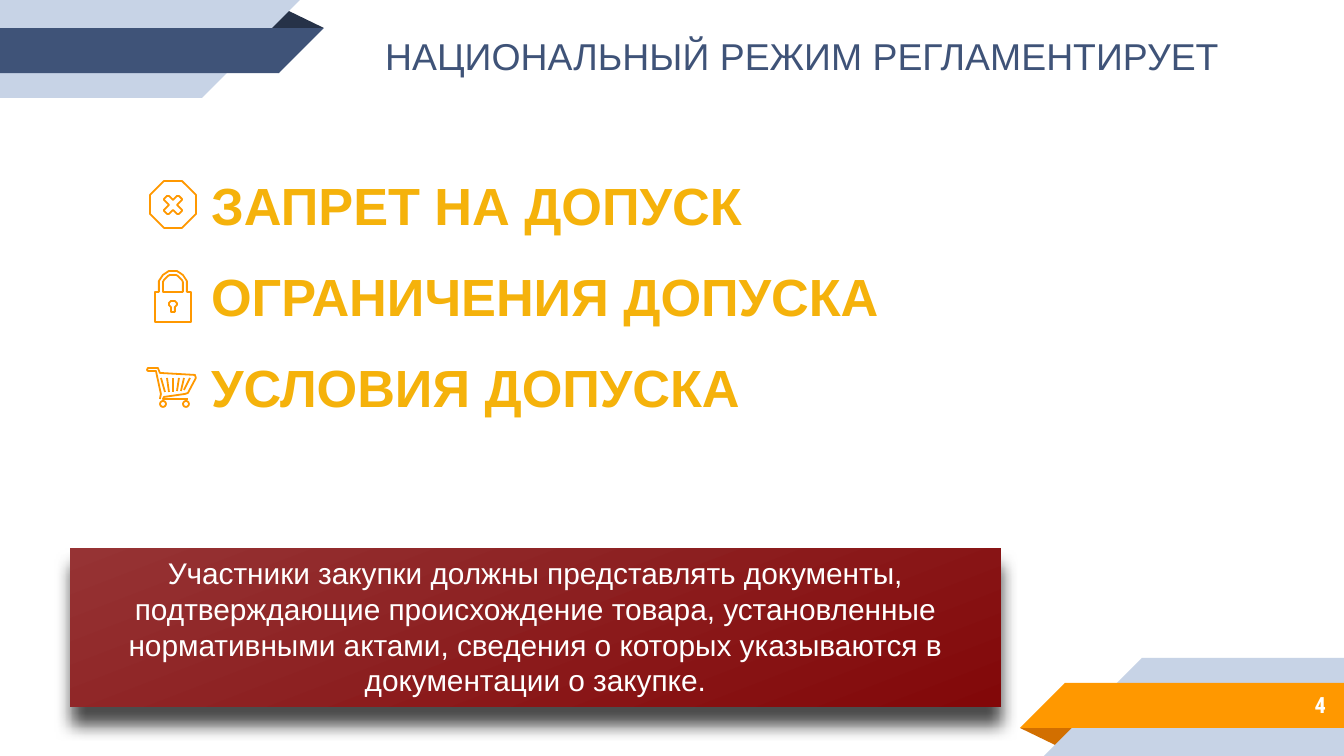
"""Build the slide on what the national regime governs."""
from dataclasses import dataclass
from math import cos, radians, sin
from typing import NamedTuple

from lxml import etree
from pptx import Presentation
from pptx import util as u
from pptx.dml.color import RGBColor
from pptx.enum import shapes, text
from pptx.oxml.ns import qn

WIDE, HIGH = 1344, 756
SCALE = 914400 / 134.4
KIND = shapes.MSO_SHAPE
Point = tuple[int, int]


@dataclass(frozen=True)
class Theme:
    navy: str = "3F5378"
    dusk: str = "263248"
    pale: str = "C7D3E6"
    amber: str = "FF9800"
    rust: str = "D26F00"
    gold: str = "F5B20B"
    white: str = "FFFFFF"
    black: str = "000000"
    rose: str = "963334"
    wine: str = "820809"
    font: str = "Arial"
    narrow: str = "Roboto Condensed"
    title: int = 20
    item: int = 28
    body: int = 16
    page: int = 12
    line: float = 0.96


class Box(NamedTuple):
    x: int
    y: int
    w: int
    h: int


class Part(NamedTuple):
    kind: int
    box: Box
    fold: bool = False
    light: bool = False


class Label(NamedTuple):
    words: str
    box: Box
    size: int
    color: str
    bold: bool = False


T = Theme()
RIBBON = [
    Part(KIND.ISOSCELES_TRIANGLE, Box(266, 9, 58, 19), fold=True),
    Part(KIND.RECTANGLE, Box(0, 0, 202, 98), light=True),
    Part(KIND.RIGHT_TRIANGLE, Box(202, 0, 98, 98), light=True),
    Part(KIND.RECTANGLE, Box(0, 28, 279, 45)),
    Part(KIND.RIGHT_TRIANGLE, Box(279, 28, 45, 45)),
]
ITEMS = ["ЗАПРЕТ НА ДОПУСК", "ОГРАНИЧЕНИЯ ДОПУСКА", "УСЛОВИЯ ДОПУСКА"]
TITLE = Label("НАЦИОНАЛЬНЫЙ РЕЖИМ РЕГЛАМЕНТИРУЕТ", Box(372, 27, 872, 59), T.title, T.navy)
NOTE = ("Участники закупки должны представлять документы, подтверждающие "
        "происхождение товара, установленные нормативными актами, сведения "
        "о которых указываются в документации о закупке.")
OCTAGON = [(164, 181), (182, 181), (196, 195), (196, 214),
           (182, 228), (164, 228), (150, 214), (150, 195)]
CROSS = [(177, 205), (182, 210), (182, 211), (179, 214), (177, 214), (173, 210),
         (169, 214), (167, 214), (164, 211), (164, 210), (169, 205),
         (164, 200), (164, 199), (167, 196), (169, 196), (173, 200),
         (177, 196), (179, 196), (182, 199), (182, 200)]
KEYHOLE = [(175, 307), (175, 312), (171, 312), (171, 307), (169, 305),
           (169, 303), (171, 301), (175, 301), (177, 303), (177, 305)]
CART = [(188, 399), (163, 399), (164, 397), (185, 394), (188, 393), (196, 378),
        (195, 375), (160, 373), (158, 368), (148, 368), (147, 370), (148, 371),
        (156, 371), (161, 394), (160, 399)]
SLATS = [(184, 390, 190), (181, 391, 184), (177, 391, 179),
         (173, 392, 173), (169, 392, 167), (165, 392, 161)]


def emu(n: float) -> int:
    return u.Emu(round(n * SCALE))


def place(box: Box) -> list[int]:
    return [emu(n) for n in box]


def rgb(code: str) -> RGBColor:
    return RGBColor.from_string(code)


def paint(shape, color: str) -> None:
    shape.shadow.inherit = False
    shape.fill.solid()
    shape.fill.fore_color.rgb = rgb(color)
    shape.line.fill.background()


def stroke(line) -> None:
    line.color.rgb = rgb(T.amber)
    line.width = u.Pt(T.line)


def sketch(shape) -> None:
    shape.shadow.inherit = False
    shape.fill.background()
    stroke(shape.line)


def ribbon(slide, main: str, fold: str, low: bool) -> None:
    group = slide.shapes.add_group_shape().shapes
    for part in RIBBON:
        x, y, w, h = part.box
        box = Box(WIDE - x - w, HIGH - y - h, w, h) if low else part.box
        shape = group.add_shape(part.kind, *place(box))
        paint(shape, fold if part.fold else T.pale if part.light else main)
        if part.fold:
            shape.adjustments[0] = 0.324
            shape.rotation = 180 if low else 0
        else:
            shape.rotation = 0 if low else 180
            shape._element.spPr.find(qn("a:xfrm")).set("flipH", "1")


def write(frame, words: str, size: int, color: str, bold: bool = False,
          font: str = T.font, align=text.PP_ALIGN.LEFT) -> None:
    frame.word_wrap = True
    para = frame.paragraphs[0]
    para.text = words
    para.alignment = align
    para.font.name = font
    para.font.size = u.Pt(size)
    para.font.bold = bold
    para.font.color.rgb = rgb(color)


def label(slide, item: Label) -> None:
    frame = slide.shapes.add_textbox(*place(item.box)).text_frame
    write(frame, item.words, item.size, item.color, item.bold)


def number(slide) -> None:
    frame = slide.shapes.add_textbox(*place(Box(1120, 681, 219, 47))).text_frame
    frame.margin_left = frame.margin_right = emu(13)
    frame.margin_top = frame.margin_bottom = emu(13)
    frame.vertical_anchor = text.MSO_ANCHOR.MIDDLE
    write(frame, "4", T.page, T.white, True, T.narrow, text.PP_ALIGN.RIGHT)


def arch(x: int, y: int, r: int) -> list[Point]:
    turns = [radians(a) for a in range(0, 181, 15)]
    return [(round(x + r * cos(a)), round(y - r * sin(a))) for a in turns]


def trace(canvas, *loops: list[Point], close: bool = True) -> None:
    pen = canvas.build_freeform(*loops[0][0], scale=SCALE)
    for loop in loops:
        if loop is not loops[0]:
            pen.move_to(*loop[0])
        pen.add_line_segments(loop[1:], close=close)
    sketch(pen.convert_to_shape())


def lock(slide) -> None:
    body = [(191, 292), (187, 292), *arch(173, 285, 14), (159, 292),
            (155, 292), (155, 322), (191, 322)]
    inner = [(183, 292), *arch(173, 285, 10), (163, 292)]
    trace(slide.shapes, body, inner, KEYHOLE)


def cart(slide) -> None:
    group = slide.shapes.add_group_shape().shapes
    for x in (183, 160):
        sketch(group.add_shape(KIND.OVAL, *place(Box(x, 401, 6, 6))))
    trace(group, CART, close=False)
    for foot, low, head in SLATS:
        slat = group.add_connector(shapes.MSO_CONNECTOR.STRAIGHT,
                                   emu(foot), emu(low), emu(head), emu(378))
        stroke(slat.line)
        etree.SubElement(slat._element.spPr, qn("a:effectLst"))


def banner(slide) -> None:
    shape = slide.shapes.add_shape(KIND.RECTANGLE, *place(Box(70, 548, 931, 159)))
    paint(shape, T.wine)
    shape.fill.gradient()
    shape.fill.gradient_angle = 291
    for stop, color in zip(shape.fill.gradient_stops, (T.rose, T.wine)):
        stop.color.rgb = rgb(color)
    glow = etree.SubElement(shape._element.spPr.find(qn("a:effectLst")), qn("a:outerShdw"),
                            blurRad=str(u.Pt(9)), dist=str(u.Pt(9)), dir="5400000",
                            algn="ctr", rotWithShape="0")
    tint = etree.SubElement(glow, qn("a:srgbClr"), val=T.black)
    etree.SubElement(tint, qn("a:alpha"), val="70000")
    shape.text_frame.vertical_anchor = text.MSO_ANCHOR.TOP
    write(shape.text_frame, NOTE, T.body, T.white, align=text.PP_ALIGN.CENTER)


def main() -> None:
    deck = Presentation()
    deck.slide_width, deck.slide_height = emu(WIDE), emu(HIGH)
    slide = deck.slides.add_slide(deck.slide_layouts[6])
    ribbon(slide, T.amber, T.rust, low=True)
    ribbon(slide, T.navy, T.dusk, low=False)
    number(slide)
    for row, words in enumerate(ITEMS):
        label(slide, Label(words, Box(198, 167 + 91 * row, 868, 77), T.item, T.gold, True))
    trace(slide.shapes, OCTAGON, CROSS)
    lock(slide)
    cart(slide)
    banner(slide)
    label(slide, TITLE)
    deck.save("out.pptx")


if __name__ == "__main__":
    main()
